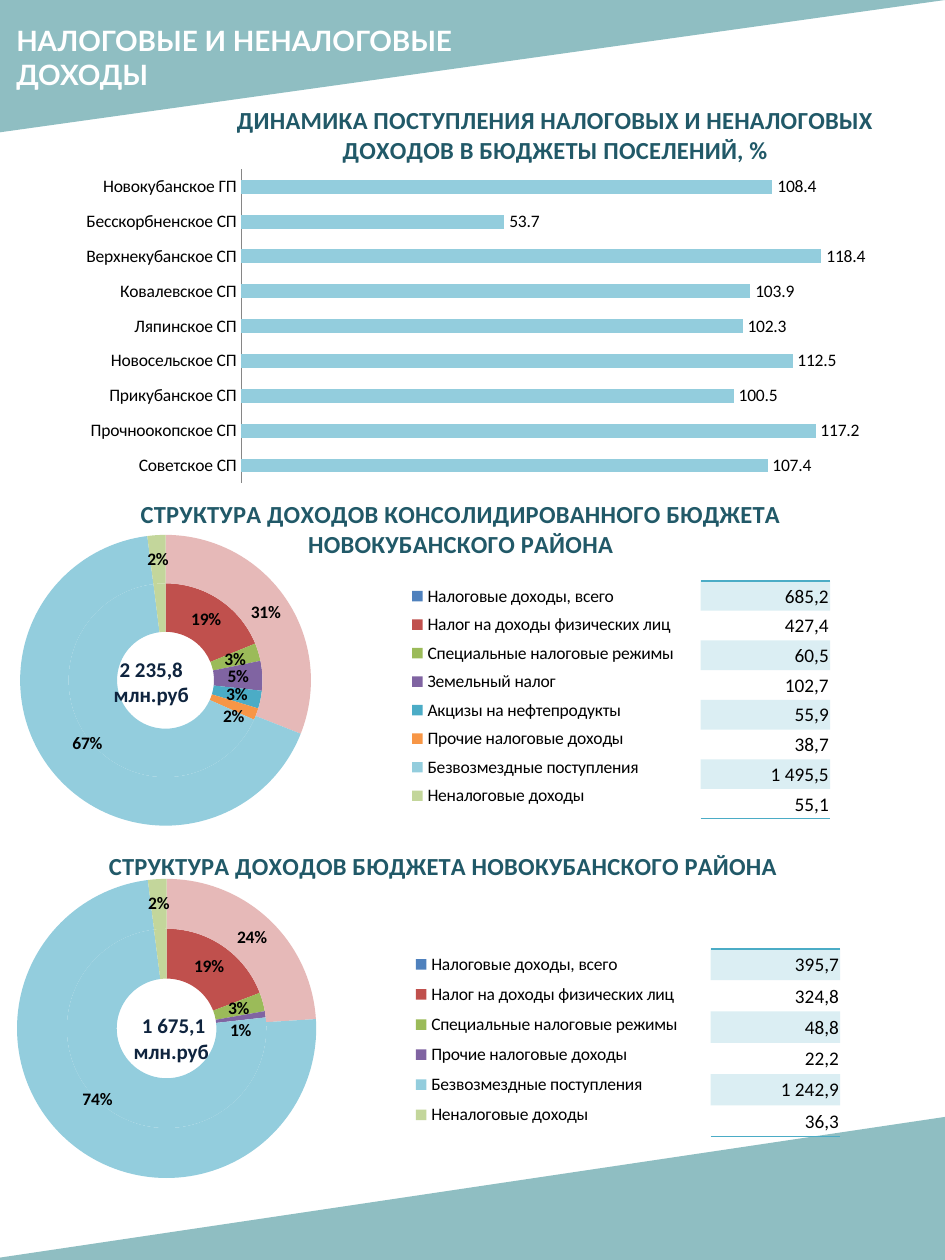
from lxml.etree import SubElement
from pptx import Presentation
from pptx.chart.data import CategoryChartData
from pptx.dml.color import RGBColor
from pptx.enum.chart import XL_CHART_TYPE as ChartType, XL_LABEL_POSITION as LabelPos
from pptx.enum.chart import XL_LEGEND_POSITION as LegendPos, XL_TICK_MARK as Tick
from pptx.enum.shapes import MSO_SHAPE as Shape
from pptx.enum.text import MSO_ANCHOR as Anchor, MSO_AUTO_SIZE as AutoSize, PP_ALIGN as Align
from pptx.oxml import parse_xml
from pptx.oxml.ns import nsdecls, qn
from pptx.util import Pt

NO_STYLE = "{2D5ABB26-0587-4C30-8999-92F81FD0307C}"
TEAL, SKY, TITLE, AQUA, PINK = "519AA0", "93CDDD", "215968", "4BACC6", "E6B9B8"
TAXES = [("Налоговые доходы, всего", "4F81BD"), ("Налог на доходы физических лиц", "C0504D"),
         ("Специальные налоговые режимы", "9BBB59")]
OTHER = "Прочие налоговые доходы"
REST = [("Безвозмездные поступления", SKY), ("Неналоговые доходы", "C3D69B")]
SETTLEMENTS = {
    "Новокубанское ГП": 108.4, "Бесскорбненское СП": 53.7, "Верхнекубанское СП": 118.4,
    "Ковалевское СП": 103.9, "Ляпинское СП": 102.3, "Новосельское СП": 112.5,
    "Прикубанское СП": 100.5, "Прочноокопское СП": 117.2, "Советское СП": 107.4}

def color(hex_code):
    return RGBColor.from_string(hex_code)

def box(*lengths):
    return [Pt(length) for length in lengths]

def fill_solid(fill, hex_code, opacity=100):
    fill.solid()
    fill.fore_color.rgb = color(hex_code)
    if opacity < 100:
        srgb = fill._xPr.find(qn("a:solidFill"))[0]
        SubElement(srgb, qn("a:alpha")).set("val", str(opacity * 1000))

def write(frame, text, size=10, hex_code="000000", bold=False, font="Calibri", align=None):
    frame.paragraphs[0].alignment = align
    run = frame.paragraphs[0].add_run()
    run.text = text
    run.font.size, run.font.bold, run.font.name = Pt(size), bold, font
    run.font.color.rgb = color(hex_code)

def add_text(slide, place, text, **style):
    frame = slide.shapes.add_textbox(*box(*place)).text_frame
    frame.word_wrap, frame.auto_size = True, AutoSize.SHAPE_TO_FIT_TEXT
    write(frame, text, **style)

def add_corner(slide, place, flip):
    corner = slide.shapes.add_shape(Shape.RIGHT_TRIANGLE, *box(*place))
    corner.rotation = 180
    corner.element.spPr.find(qn("a:xfrm")).set(flip, "1")
    corner.shadow.inherit = False
    fill_solid(corner.fill, TEAL, 64)
    corner.line.fill.background()

def set_layout(part, *place, inner=False):
    """Place a chart part by fractions (x, y, w, h) of the chart area."""
    for old in part.findall(qn("c:layout")):
        part.remove(old)
    layout = parse_xml(f"<c:layout {nsdecls('c')}><c:manualLayout/></c:layout>")
    values = [("layoutTarget", "inner")] if inner else []
    values += [("xMode", "edge"), ("yMode", "edge"), *zip("xywh", place)]
    for tag, value in values:
        SubElement(layout[0], qn("c:" + tag)).set("val", str(value))
    part.insert(0 if inner else 1, layout)

def add_chart(slide, kind, place, categories, series, title, title_at, plot_at):
    data = CategoryChartData()
    data.categories = categories
    for number, values in enumerate(series, 1):
        data.add_series(f"Series {number}", values)
    chart = slide.shapes.add_chart(kind, *box(*place), data).chart
    chart.font.size, chart.font.name = Pt(10), "Calibri"
    chart.font.color.rgb = color("000000")
    chart.has_legend, chart.has_title = False, True
    write(chart.chart_title.text_frame, title, size=14, hex_code=TITLE, bold=True)
    body = chart.element.find(qn("c:chart"))
    set_layout(body.find(qn("c:title")), *title_at)
    set_layout(body.find(qn("c:plotArea")), *plot_at, inner=True)
    body.addnext(parse_xml(f"<c:spPr {nsdecls('c', 'a')}><a:noFill/>"
                           "<a:ln><a:noFill/></a:ln></c:spPr>"))
    return chart

def add_growth_bars(slide):
    chart = add_chart(
        slide, ChartType.BAR_CLUSTERED, (37.4, 41.8, 502.6, 239), list(SETTLEMENTS),
        [list(SETTLEMENTS.values())],
        "ДИНАМИКА ПОСТУПЛЕНИЯ НАЛОГОВЫХ И НЕНАЛОГОВЫХ ДОХОДОВ В БЮДЖЕТЫ ПОСЕЛЕНИЙ, %",
        (0.19, 0.06), (0.2, 0.23, 0.78, 0.75))
    plot = chart.plots[0]
    plot.gap_width, plot.overlap, plot.vary_by_categories = 150, -25, False
    fill_solid(plot.series[0].format.fill, SKY)
    labels = plot.series[0].data_labels
    labels.show_value, labels.position = True, LabelPos.OUTSIDE_END
    labels.number_format, labels.number_format_is_linked = "#,##0.0", False
    names, scale = chart.category_axis, chart.value_axis
    names.reverse_order = True
    names.major_tick_mark = names.minor_tick_mark = Tick.NONE
    names.format.line.color.rgb = color("868686")
    scale.visible = scale.has_major_gridlines = False
    scale.minimum_scale, scale.maximum_scale = 0, 140

def adjust_label(labels, index, offset):
    """Shift one percentage label by chart fractions, or delete it if offset is None."""
    body = '<c:delete val="1"/>'
    if offset:
        shows = (("LegendKey", 0), ("Val", 0), ("CatName", 0), ("SerName", 0),
                 ("Percent", 1), ("BubbleSize", 0))
        body = (f'<c:layout><c:manualLayout><c:x val="{offset[0]}"/><c:y val="{offset[1]}"/>'
                '</c:manualLayout></c:layout><c:numFmt formatCode="0%" sourceLinked="0"/>'
                '<c:spPr/><c:txPr><a:bodyPr/><a:p><a:pPr><a:defRPr sz="1000" b="1"/></a:pPr>'
                '</a:p></c:txPr>' + "".join(f'<c:show{n} val="{v}"/>' for n, v in shows))
    labels._element.insert(0, parse_xml(
        f'<c:dLbl {nsdecls("c", "a")}><c:idx val="{index}"/>{body}</c:dLbl>'))

def add_income_rings(slide, place, items, values, title, title_at, plot_at, legend_at, offsets):
    names, shades = zip(*items)
    chart = add_chart(slide, ChartType.DOUGHNUT, place, names, values, title, title_at, plot_at)
    chart.has_legend = True
    chart.legend.position, chart.legend.include_in_layout = LegendPos.RIGHT, False
    set_layout(chart.legend._element, *legend_at)
    plot = chart.plots[0]
    plot.vary_by_categories = True
    for ring, first, moved in zip(plot.series, (shades[0], PINK), offsets):
        for index, shade in enumerate((first, *shades[1:])):
            slice_format = ring.points[index].format
            fill_solid(slice_format.fill, shade)
            slice_format.line.fill.background()
        labels = ring.data_labels
        labels.show_percentage, labels.show_value = True, False
        labels.number_format, labels.number_format_is_linked = "0%", False
        labels.font.bold, labels.font.size = True, Pt(10)
        for index in sorted(moved, reverse=True):
            adjust_label(labels, index, moved[index])

def add_border(cell, side):
    cell._tc.get_or_add_tcPr().insert(0, parse_xml(
        f'<a:{side} {nsdecls("a")} w="12700"><a:solidFill><a:srgbClr val="{AQUA}"/>'
        f'</a:solidFill></a:{side}>'))

def add_amounts(slide, left, top, row_height, amounts):
    place = box(left, top, 74, row_height * len(amounts))
    table = slide.shapes.add_table(len(amounts), 1, *place).table
    table.first_row = table.horz_banding = False
    table._tbl.tblPr.find(qn("a:tableStyleId")).text = NO_STYLE
    for index, amount in enumerate(amounts):
        table.rows[index].height = Pt(row_height)
        cell = table.cell(index, 0)
        cell.vertical_anchor = Anchor.MIDDLE
        cell.margin_left = cell.margin_right = cell.margin_top = Pt(0.7)
        cell.margin_bottom = 0
        write(cell.text_frame, amount, size=11, align=Align.RIGHT)
        if index % 2:
            cell.fill.background()
        else:
            fill_solid(cell.fill, AQUA, 20)
    add_border(table.cell(0, 0), "lnT")
    add_border(table.cell(len(amounts) - 1, 0), "lnB")

def main():
    deck = Presentation()
    deck.slide_width, deck.slide_height = Pt(540), Pt(720)
    slide = deck.slides.add_slide(deck.slide_layouts[6])
    add_income_rings(
        slide, (-46.1, 473, 587.5, 237.6), [*TAXES, (OTHER, "8064A2"), *REST],
        [[None, 19, 3, 1, 74, 2], [24, None, None, None, 74, 2]],
        "СТРУКТУРА ДОХОДОВ БЮДЖЕТА НОВОКУБАНСКОГО РАЙОНА",
        (0.18, 0.04), (0.095, 0.123, 0.291, 0.72), (0.47, 0.28, 0.28, 0.46),
        [{3: (0, 0.03), 4: None, 5: None}, {4: (0.01, -0.06)}])
    add_income_rings(
        slide, (2.9, 275, 499.7, 211.7),
        [*TAXES, ("Земельный налог", "8064A2"), ("Акцизы на нефтепродукты", AQUA),
         (OTHER, "F79646"), *REST],
        [[None, 19, 3, 5, 3, 2, 67, 2], [31, None, None, None, None, None, 67, 2]],
        "СТРУКТУРА ДОХОДОВ КОНСОЛИДИРОВАННОГО БЮДЖЕТА НОВОКУБАНСКОГО РАЙОНА",
        (0.15, 0.03), (0.017, 0.145, 0.333, 0.785), (0.45, 0.26, 0.33, 0.64),
        [{5: (0, 0.03), 6: None, 7: None}, {6: (0.02, -0.03)}])
    add_corner(slide, (0, 0, 540, 75.6), "flipH")
    add_corner(slide, (-9.4, 638, 550.8, 82), "flipV")
    total = {"size": 12, "hex_code": "0F243E", "bold": True, "align": Align.CENTER}
    add_text(slide, (54.7, 371.5, 63.4, 36), "2 235,8 млн.руб", **total)
    add_text(slide, (66.2, 575.3, 63.4, 36), " 1 675,1 млн.руб", **total)
    add_amounts(slide, 400.3, 332, 17,
                ["685,2", "427,4", "60,5", "102,7", "55,9", "38,7", "1 495,5", "55,1"])
    add_amounts(slide, 406.1, 542.2, 17.9,
                ["395,7", "324,8", "48,8", "22,2", "1 242,9", "36,3"])
    add_growth_bars(slide)
    add_text(slide, (2.2, 10, 324.7, 46), "НАЛОГОВЫЕ И НЕНАЛОГОВЫЕ ДОХОДЫ",
             size=16, hex_code="FFFFFF", bold=True, font="Lato")
    deck.save("out.pptx")

if __name__ == "__main__":
    main()
